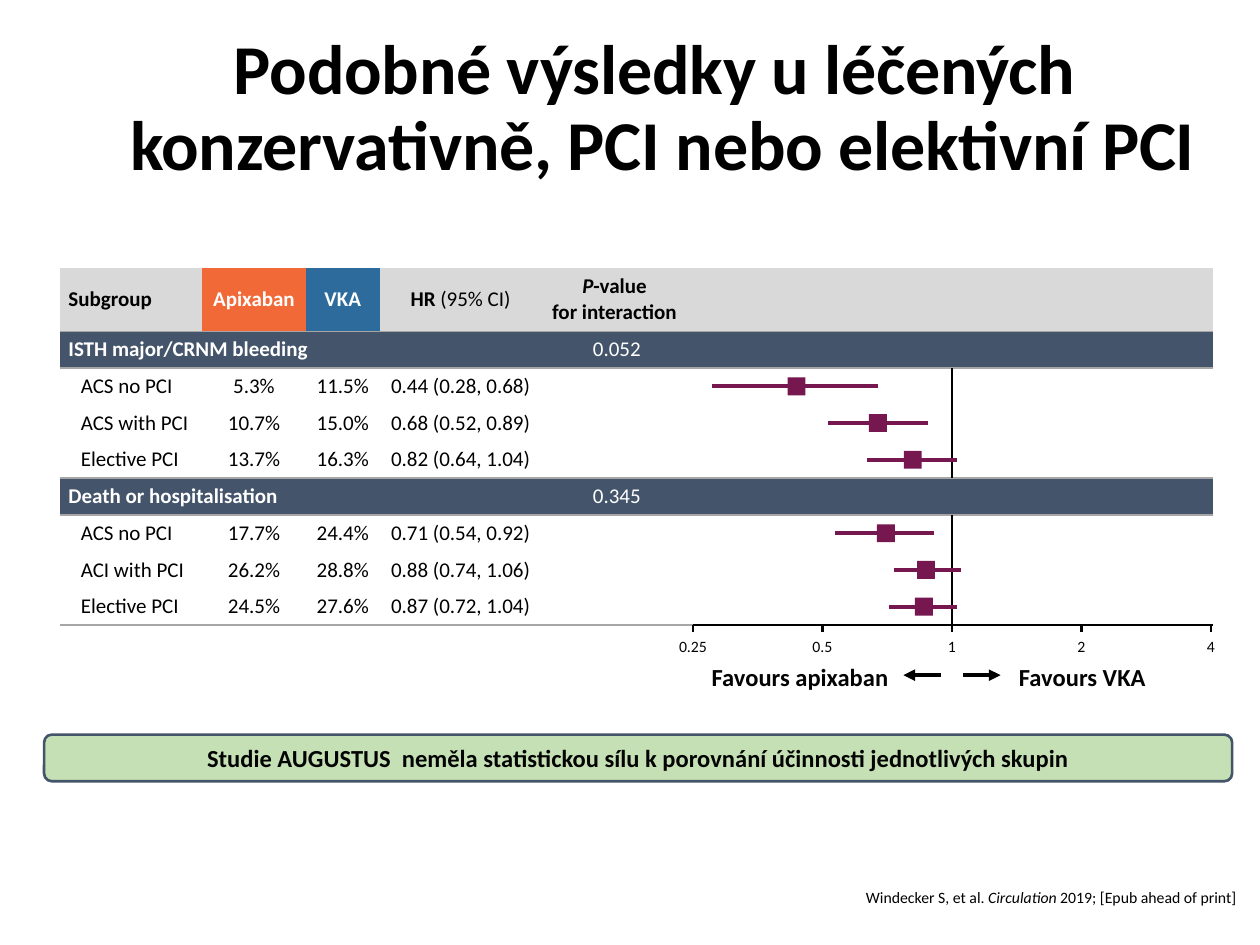
from math import log2

from lxml.etree import SubElement
from pptx import Presentation
from pptx.dml.color import RGBColor
from pptx.enum.shapes import MSO_CONNECTOR as CONN, MSO_SHAPE as SHAPE
from pptx.enum.text import MSO_ANCHOR as ANCHOR, PP_ALIGN as ALIGN
from pptx.oxml.ns import qn
from pptx.util import Cm, Pt

FONT = "Calibri"
BLACK, WHITE, INK = "000000", "FFFFFF", "030303"
NAVY, GREY, RULE, PLUM = "44546A", "D9D9D9", "A6A6A6", "76174F"
NO_GRID_STYLE = "{2D5ABB26-0587-4C30-8999-92F81FD0307C}"

LEFT, TOP = 1.21, 5.4
COLS = [2.87, 2.08, 1.5, 3.25, 3.05, 10.49]
HEAD_H, ROW_H = 1.28, 0.74
UNIT_X, DOUBLING = 19.19, 2.61  # place of ratio 1, and width of a factor of two
MARKER_SHIFT = -0.04
MARKER = 0.36

HEADER = [
    ("Subgroup", GREY, BLACK),
    ("Apixaban", "F26938", WHITE),
    ("VKA", "2C6B9C", WHITE),
    ([("HR ", {}), ("(95% CI)", {"bold": False})], GREY, BLACK),
    ([("P", {"italic": True}), ("-value \nfor interaction ", {})], GREY, BLACK),
    ("", GREY, BLACK),
]
# Each group: title, P-value, rows of (name, apixaban, VKA, ratio, low, high)
GROUPS = [
    ("ISTH major/CRNM bleeding", "0.052", [
        ("ACS no PCI", "5.3%", "11.5%", 0.44, 0.28, 0.68),
        ("ACS with PCI", "10.7%", "15.0%", 0.68, 0.52, 0.89),
        ("Elective PCI", "13.7%", "16.3%", 0.82, 0.64, 1.04),
    ]),
    ("Death or hospitalisation", "0.345", [
        ("ACS no PCI", "17.7%", "24.4%", 0.71, 0.54, 0.92),
        ("ACI with PCI", "26.2%", "28.8%", 0.88, 0.74, 1.06),
        ("Elective PCI", "24.5%", "27.6%", 0.87, 0.72, 1.04),
    ]),
]
GROUP_SIZE = 1 + len(GROUPS[0][2])
ROW_COUNT = 1 + len(GROUPS) * GROUP_SIZE


def rgb(value):
    return RGBColor.from_string(value)


def ratio_x(ratio):
    return UNIT_X + DOUBLING * log2(ratio)


def row_top(row):
    return TOP + HEAD_H + (row - 1) * ROW_H


def write(tf, content, size=12, color=BLACK, bold=False, align=ALIGN.LEFT,
          spacing=None, indent=0, kern=0):
    """Fill a text frame from a string or a list of (text, font overrides)."""
    p = tf.paragraphs[0]
    p.alignment = align
    if spacing:
        p.line_spacing = spacing
    if indent:
        p._p.get_or_add_pPr().set("marL", str(Cm(indent)))
    for text, override in [(content, {})] if isinstance(content, str) else content:
        for i, line in enumerate(text.split("\n")):
            if i:
                p.add_line_break()
            if not line:
                continue
            r = p.add_run()
            r.text = line
            r.font.name, r.font.size = FONT, Pt(size)
            r.font.color.rgb = rgb(color)
            r.font.bold = override.get("bold", bold)
            r.font.italic = override.get("italic", False)
            if kern:
                r._r.get_or_add_rPr().set("spc", str(kern))
    p._p.get_or_add_endParaRPr().set("sz", str(size * 100))


def add_text(s, box, content, wrap=True, **fmt):
    tf = s.shapes.add_textbox(*map(Cm, box)).text_frame
    tf.word_wrap = wrap
    tf.vertical_anchor = ANCHOR.MIDDLE
    write(tf, content, **fmt)


def add_box(s, kind, box, fill, line=None):
    sp = s.shapes.add_shape(kind, *map(Cm, box))
    sp.shadow.inherit = False
    sp.fill.solid()
    sp.fill.fore_color.rgb = rgb(fill)
    if line:
        sp.line.color.rgb = rgb(line)
        sp.line.width = Pt(1.5)
    else:
        sp.line.fill.background()
    return sp


def add_line(s, x1, y1, x2, y2, color=BLACK, width=1.5, arrow=False):
    c = s.shapes.add_connector(CONN.STRAIGHT, Cm(x1), Cm(y1), Cm(x2), Cm(y2))
    c.line.color.rgb = rgb(color)
    c.line.width = Pt(width)
    if arrow:
        SubElement(c.line._get_or_add_ln(), qn("a:tailEnd"), type="triangle")
    SubElement(c._element.spPr, qn("a:effectLst"))


def set_cell(cell, content, fill, edges=None, **fmt):
    """Write a cell; edges maps a side (T, B) to (colour, points)."""
    cell.margin_left = cell.margin_right = Cm(0.17)
    cell.margin_top = cell.margin_bottom = Cm(0.08)
    cell.vertical_anchor = ANCHOR.MIDDLE
    for side, (color, width) in (edges or {}).items():
        ln = SubElement(cell._tc.get_or_add_tcPr(), qn(f"a:ln{side}"), w=str(Pt(width)))
        SubElement(SubElement(ln, qn("a:solidFill")), qn("a:srgbClr"), val=color)
    cell.fill.solid()
    cell.fill.fore_color.rgb = rgb(fill)
    write(cell.text_frame, content, **fmt)


def align_for(col):
    return ALIGN.CENTER if col else ALIGN.LEFT


def add_subgroup_table(s):
    frame = s.shapes.add_table(ROW_COUNT, len(COLS), Cm(LEFT), Cm(TOP), Cm(sum(COLS)),
                               Cm(row_top(ROW_COUNT) - TOP))
    t = frame.table
    t.first_row = t.horz_banding = False
    t._tbl.tblPr.find(qn("a:tableStyleId")).text = NO_GRID_STYLE
    for col, width in zip(t.columns, COLS):
        col.width = Cm(width)
    for i, row in enumerate(t.rows):
        row.height = Cm(ROW_H if i else HEAD_H)

    thin, axis = (RULE, 1), (BLACK, 1.5)
    for j, (content, fill, color) in enumerate(HEADER):
        set_cell(t.cell(0, j), content, fill, color=color, bold=True, align=align_for(j))
    for g, (title, p_value, rows) in enumerate(GROUPS):
        band = 1 + g * GROUP_SIZE
        for j, content in enumerate([title, "", "", "", p_value, ""]):
            set_cell(t.cell(band, j), content, NAVY, {"T": thin, "B": thin},
                     color=WHITE, bold=j == 0, align=align_for(j))
        t.cell(band, 0).merge(t.cell(band, 3))
        for i, (name, apixaban, vka, hr, low, high) in enumerate(rows, band + 1):
            interval = f"{hr:.2f} ({low:.2f}, {high:.2f})"
            for j, content in enumerate([name, apixaban, vka, interval, "", ""]):
                edges = {}
                if i == ROW_COUNT - 1:
                    edges["B"] = axis if j == len(COLS) - 1 else thin
                set_cell(t.cell(i, j), content, WHITE, edges,
                         align=align_for(j), indent=0 if j else 0.25)


def add_axis(s):
    y = row_top(ROW_COUNT)
    for ratio in (0.25, 0.5, 1, 2, 4):
        x = ratio_x(ratio)
        add_line(s, x, y, x, y + 0.15)
        add_text(s, (x - 0.7, y + 0.1, 1.4, 0.64), str(ratio), wrap=False,
                 size=9, color=INK, align=ALIGN.CENTER)
    for x1, x2 in ((18.97, 18.21), (19.41, 20.17)):
        add_line(s, x1, 13.61, x2, 13.61, width=2.25, arrow=True)
    for x, w, text, align in ((14.07, 4.09, "Favours apixaban", ALIGN.RIGHT),
                              (20.29, 3.07, "Favours VKA", ALIGN.LEFT)):
        add_text(s, (x, 13.21, w, 0.86), text, wrap=False, size=14, color=INK,
                 bold=True, align=align)


def add_forest_plot(s):
    for g, (_, _, rows) in enumerate(GROUPS):
        first = 2 + g * GROUP_SIZE
        add_line(s, UNIT_X, row_top(first), UNIT_X, row_top(first + len(rows)))
        for i, (*_, hr, low, high) in enumerate(rows, first):
            y = row_top(i) + ROW_H / 2
            x, x1, x2 = (ratio_x(v) + MARKER_SHIFT for v in (hr, low, high))
            add_line(s, x1, y, x2, y, PLUM, 2.25)
            add_box(s, SHAPE.RECTANGLE, (x - MARKER / 2, y - MARKER / 2, MARKER, MARKER), PLUM)


def main():
    prs = Presentation()
    prs.slide_width, prs.slide_height = Cm(25.4), Cm(19.05)
    s = prs.slides.add_slide(prs.slide_layouts[6])
    add_text(s, (1.19, 1.12, 24.33, 2.18),
             "Podobné výsledky u léčených \nkonzervativně, PCI nebo elektivní PCI",
             size=40, bold=True, align=ALIGN.CENTER, spacing=0.9, kern=-10)
    add_text(s, (5.61, 17.42, 19.56, 1.4),
             [("Windecker S, et al. ", {}), ("Circulation", {"italic": True}),
              (" 2019; [Epub ahead of print]", {})],
             size=9, align=ALIGN.RIGHT, spacing=0.9)
    add_subgroup_table(s)
    note = add_box(s, SHAPE.ROUNDED_RECTANGLE, (0.89, 14.81, 23.95, 0.94), "C5E0B4", NAVY)
    note.text_frame.word_wrap = True
    write(note.text_frame,
          "Studie AUGUSTUS  neměla statistickou sílu k porovnání účinnosti jednotlivých skupin",
          size=14, color=INK, bold=True, align=ALIGN.CENTER)
    add_axis(s)
    add_forest_plot(s)
    prs.save("out.pptx")


if __name__ == "__main__":
    main()
